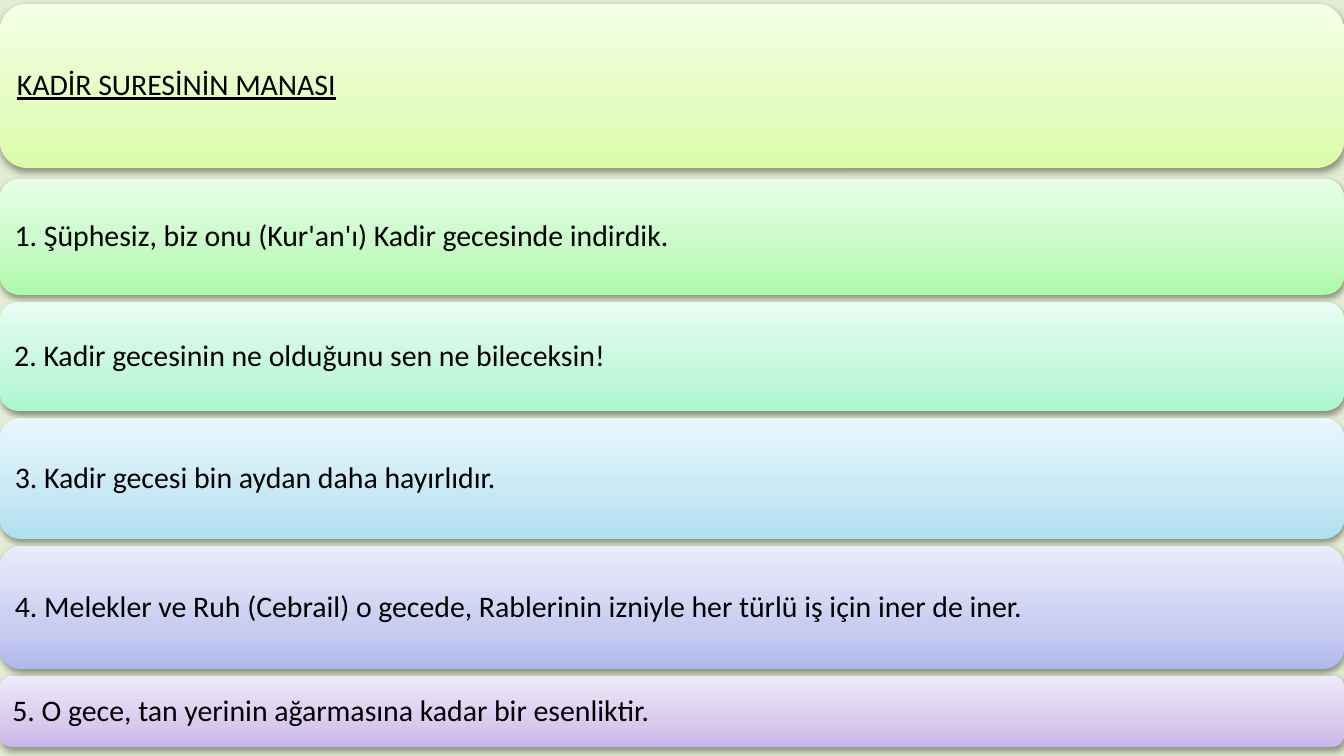
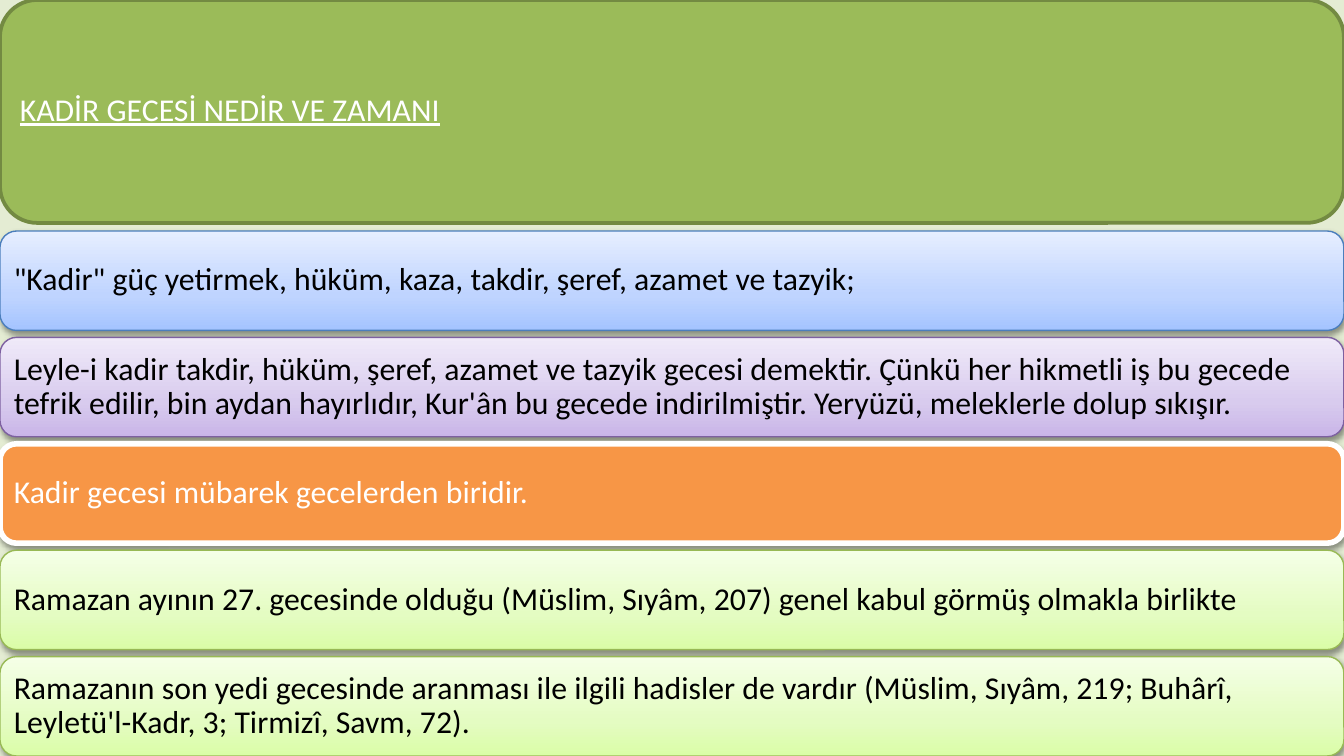
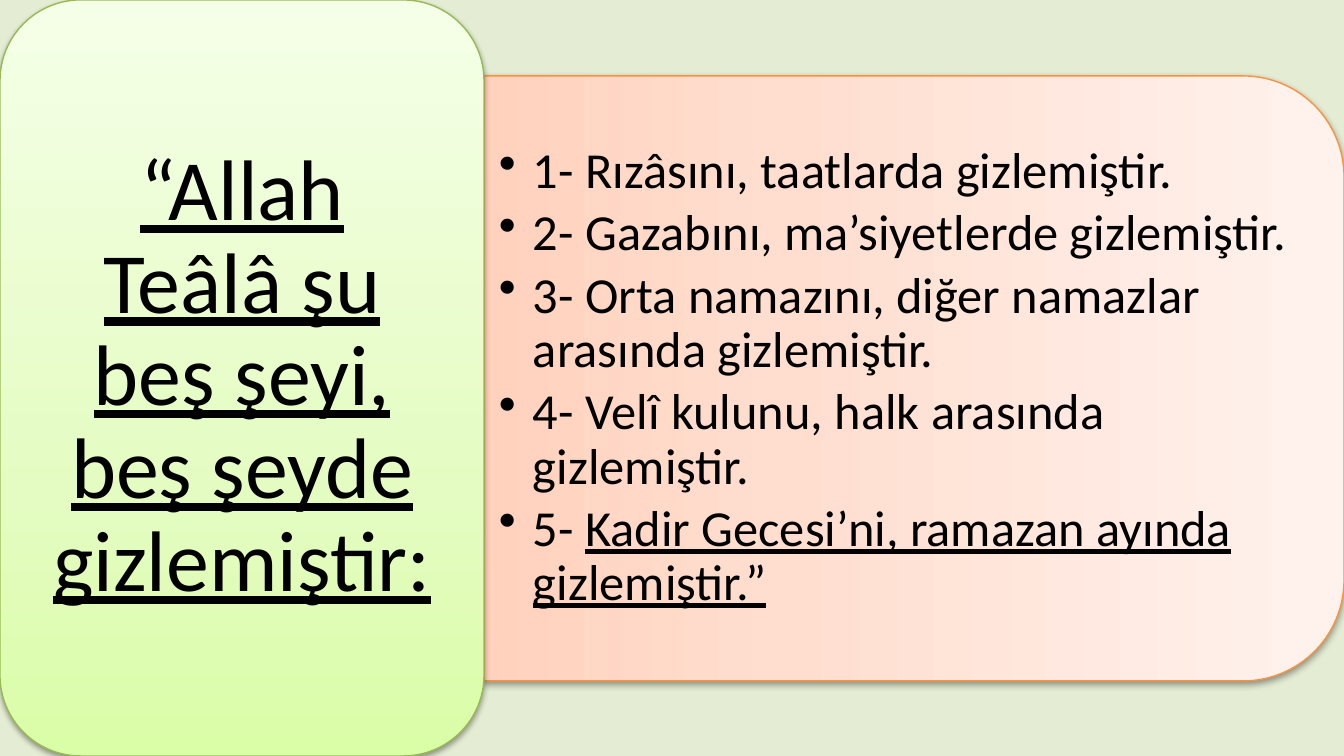
from copy import deepcopy
from dataclasses import dataclass

from lxml import etree
from pptx import Presentation
from pptx.dml.color import RGBColor
from pptx.enum.shapes import MSO_SHAPE
from pptx.enum.text import MSO_ANCHOR, PP_ALIGN
from pptx.oxml.ns import qn
from pptx.util import Pt

ROUND_RECT = MSO_SHAPE.ROUNDED_RECTANGLE
ROUND_TOP = MSO_SHAPE.ROUND_2_SAME_RECTANGLE
MIDDLE = MSO_ANCHOR.MIDDLE
LEFT, CENTER = PP_ALIGN.LEFT, PP_ALIGN.CENTER

EMU_PER_PX = 914400 / 134.4
SLIDE_W, SLIDE_H = 1344, 756


@dataclass(frozen=True)
class Look:
    """Fill (one colour, or three from bottom to top), outline and text colour."""
    fill: tuple
    line: str = ""
    line_pt: float = 0.75
    text: str = "000000"
    shadow: bool = True


class Theme:
    font = "Calibri"
    background, background_alpha = "C3D69B", 44
    stops = (0, 0.35, 1)
    lime = ("DAFDA7", "E4FCC2", "F5FFE7")
    green = ("ACF9AA", "C5FAC3", "E8FEE7")
    mint = ("ACF5D0", "C5F7DD", "E8FDF2")
    aqua = ("AFE0F1", "C7E8F4", "E9F7FC")
    indigo = ("B2BAEC", "C9CEF1", "EAECFA")
    violet = ("C9B5E8", "D8CBEE", "F0EAF9")
    blue = ("A4C4FF", "BFD4FF", "E6EEFF")
    peach = ("FFD2BD", "FFDED0", "FFF2ED")
    lime_outlined = Look(lime, "98B955")
    blue_outlined = Look(blue, "4B7EBC")
    violet_outlined = Look(violet, "7D60A0")
    peach_outlined = Look(peach, "F69240")
    olive_solid = Look(("9BBB59",), "738A42", 2, "FFFFFF", False)
    orange_solid = Look(("F79646",), "FFFFFF", 3, "FFFFFF")
    verse_pt, fact_pt, list_pt, statement_pt = 16, 17, 27, 46


def px(n):
    return round(n * EMU_PER_PX)


def rgb(color):
    return RGBColor.from_string(color)


def add_slide(prs):
    slide = prs.slides.add_slide(prs.slide_layouts[6])
    fill = slide.background.fill
    fill.solid()
    fill.fore_color.rgb = rgb(Theme.background)
    color = next(slide.background._cSld.iter(qn("a:srgbClr")))
    etree.SubElement(color, qn("a:alpha"), val=str(Theme.background_alpha * 1000))
    return slide


def fill_gradient(sp, colors):
    sp.fill.gradient()
    sp.fill.gradient_angle = 90
    stop_list = next(sp._element.spPr.iter(qn("a:gsLst")))
    stop_list.insert(1, deepcopy(stop_list[0]))
    for stop, position, color in zip(sp.fill.gradient_stops, Theme.stops, colors):
        stop.position = position
        stop.color.rgb = rgb(color)


def add_shadow(sp):
    effects = sp._element.spPr.find(qn("a:effectLst"))
    outer = etree.SubElement(effects, qn("a:outerShdw"), blurRad="40000",
                             dist="20000", dir="5400000", rotWithShape="0")
    color = etree.SubElement(outer, qn("a:srgbClr"), val="000000")
    etree.SubElement(color, qn("a:alpha"), val="38000")


def add_box(slide, kind, box, look):
    sp = slide.shapes.add_shape(kind, *map(px, box))
    sp.shadow.inherit = False
    if len(look.fill) == 1:
        sp.fill.solid()
        sp.fill.fore_color.rgb = rgb(look.fill[0])
    else:
        fill_gradient(sp, look.fill)
    if look.line:
        sp.line.color.rgb = rgb(look.line)
        sp.line.width = Pt(look.line_pt)
    else:
        sp.line.fill.background()
    if look.shadow:
        add_shadow(sp)
    return sp


def add_bullet(p, indent=34):
    p.level = 1
    pPr = p._p.get_or_add_pPr()
    pPr.set("marL", str(px(indent)))
    pPr.set("indent", str(-px(indent)))
    etree.SubElement(pPr, qn("a:buChar"), char="•")


def set_text(tf, paragraphs, size, color="000000", align=LEFT, inset=(9, 9),
             after=0.35, bullet=False):
    """Write paragraphs, each a list of (text, underlined) runs."""
    tf.word_wrap = True
    tf.vertical_anchor = MIDDLE
    tf.margin_left = tf.margin_right = px(inset[0])
    tf.margin_top = tf.margin_bottom = px(inset[1])
    for i, runs in enumerate(paragraphs):
        p = tf.add_paragraph() if i else tf.paragraphs[0]
        p.alignment = align
        p.line_spacing = 0.9
        p.space_after = Pt(size * after)
        if bullet:
            add_bullet(p)
        for text, underlined in runs:
            r = p.add_run()
            r.text = text
            r.font.name = Theme.font
            r.font.size = Pt(size)
            r.font.color.rgb = rgb(color)
            if underlined:
                r.font.underline = True


def add_card(slide, box, text, look, size, underlined=False, **text_format):
    sp = add_box(slide, ROUND_RECT, box, look)
    set_text(sp.text_frame, [[(text, underlined)]], size, look.text, **text_format)


def add_card_stack(slide, box, cards, size, gap=7):
    """Fill the box with cards of (share of the height, look, text)."""
    x, y, w, h = box
    unit = (h - gap * (len(cards) - 1)) / sum(share for share, _, _ in cards)
    for share, look, text in cards:
        add_card(slide, (x, y, w, share * unit), text, look, size)
        y += share * unit + gap


def add_list_panel(slide, box, items):
    """Panel rounded on its right side, with a bulleted list."""
    x, y, w, h = box
    turn = (w - h) / 2
    sp = add_box(slide, ROUND_TOP, (x + turn, y - turn, h, w), Theme.peach_outlined)
    sp.rotation = 90
    corner = 29
    tb = slide.shapes.add_textbox(
        *map(px, (x, y + corner, w - corner, h - 2 * corner)))
    set_text(tb.text_frame, items, Theme.list_pt, inset=(15, 8), after=0.15, bullet=True)


def verses_slide(prs):
    slide = add_slide(prs)
    add_card(slide, (0, 4, SLIDE_W, 164), "KADİR SURESİNİN MANASI",
             Look(Theme.lime), Theme.verse_pt, underlined=True)
    add_card_stack(slide, (0, 179, SLIDE_W, 568), [
        (116, Look(Theme.green), "1. Şüphesiz, biz onu (Kur'an'ı) Kadir gecesinde indirdik."),
        (109, Look(Theme.mint), "2. Kadir gecesinin ne olduğunu sen ne bileceksin!"),
        (121, Look(Theme.aqua), "3. Kadir gecesi bin aydan daha hayırlıdır."),
        (123, Look(Theme.indigo), "4. Melekler ve Ruh (Cebrail) o gecede, Rablerinin izniyle "
                                  "her türlü iş için iner de iner."),
        (71, Look(Theme.violet), "5. O gece, tan yerinin ağarmasına kadar bir esenliktir."),
    ], Theme.verse_pt)


def facts_slide(prs):
    slide = add_slide(prs)
    add_card(slide, (0, 0, SLIDE_W, 223), "KADİR GECESİ NEDİR VE ZAMANI",
             Theme.olive_solid, Theme.fact_pt, underlined=True)
    add_card_stack(slide, (0, 231, SLIDE_W, 525), [
        (1, Theme.blue_outlined,
         "\"Kadir\" güç yetirmek, hüküm, kaza, takdir, şeref, azamet ve tazyik;"),
        (1, Theme.violet_outlined,
         "Leyle-i kadir takdir, hüküm, şeref, azamet ve tazyik gecesi demektir. Çünkü her "
         "hikmetli iş bu gecede tefrik edilir, bin aydan hayırlıdır, Kur'ân bu gecede "
         "indirilmiştir. Yeryüzü, meleklerle dolup sıkışır."),
        (1, Theme.orange_solid, "Kadir gecesi mübarek gecelerden biridir."),
        (1, Theme.lime_outlined,
         "Ramazan ayının 27. gecesinde olduğu (Müslim, Sıyâm, 207) genel kabul görmüş "
         "olmakla birlikte"),
        (1, Theme.lime_outlined,
         "Ramazanın son yedi gecesinde aranması ile ilgili hadisler de vardır (Müslim, "
         "Sıyâm, 219; Buhârî, Leyletü'l-Kadr, 3; Tirmizî, Savm, 72)."),
    ], Theme.fact_pt)


def hidden_things_slide(prs):
    slide = add_slide(prs)
    statement_w = 484
    add_list_panel(slide, (statement_w, 76, SLIDE_W - statement_w, 605), [
        [("1- Rızâsını, taatlarda gizlemiştir.", False)],
        [("2- Gazabını, ma’siyetlerde gizlemiştir.", False)],
        [("3- Orta namazını, diğer namazlar arasında gizlemiştir.", False)],
        [("4- Velî kulunu, halk arasında gizlemiştir.", False)],
        [("5- ", False), ("Kadir Gecesi’ni, ramazan ayında gizlemiştir.”", True)],
    ])
    add_card(slide, (0, 0, statement_w, SLIDE_H),
             "“Allah Teâlâ şu beş şeyi, beş şeyde gizlemiştir:", Theme.lime_outlined,
             Theme.statement_pt, underlined=True, align=CENTER, inset=(26, 13))


def main():
    prs = Presentation()
    prs.slide_width, prs.slide_height = px(SLIDE_W), px(SLIDE_H)
    verses_slide(prs)
    facts_slide(prs)
    hidden_things_slide(prs)
    prs.save("out.pptx")


if __name__ == "__main__":
    main()
